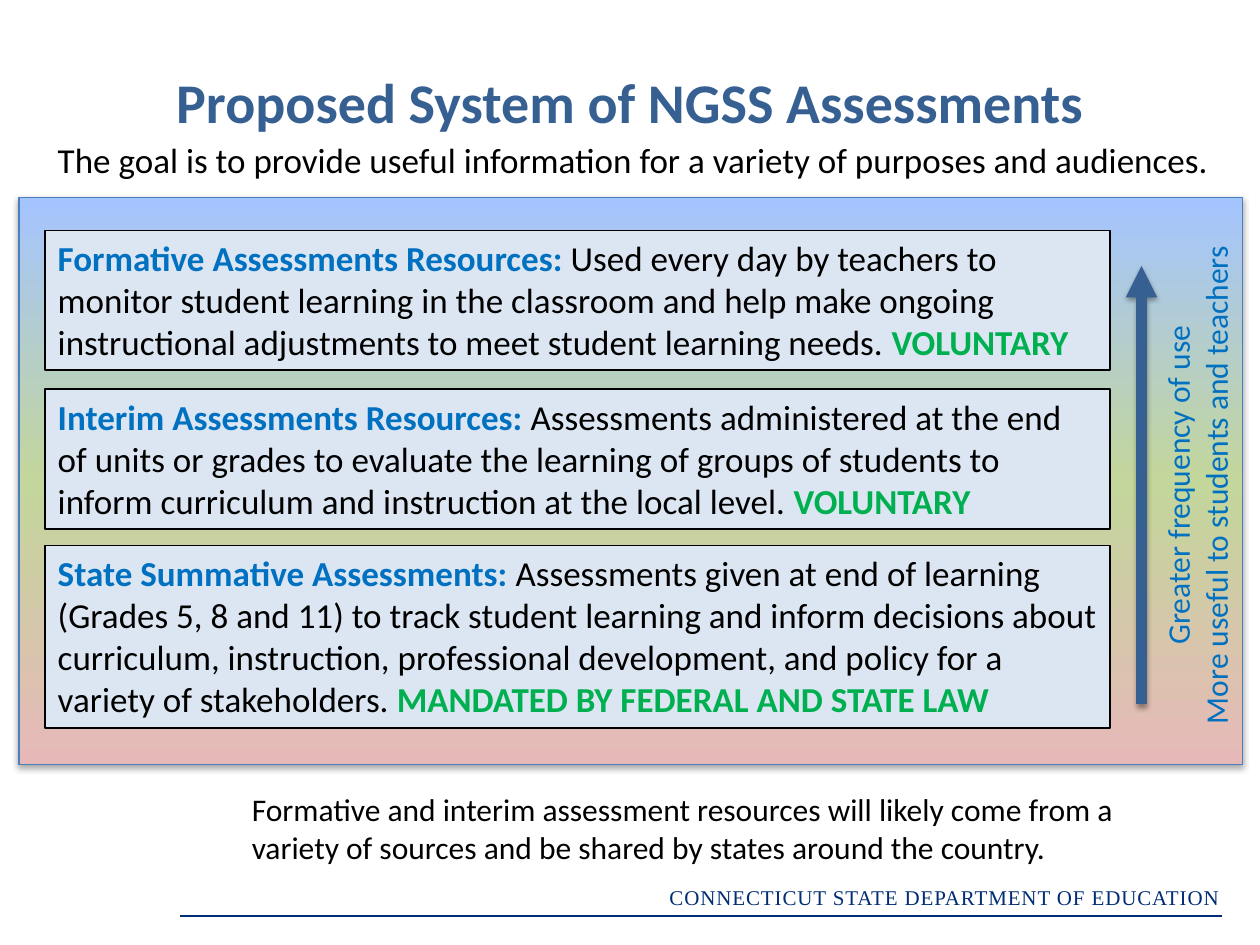
import pptx
import pptx.util
import pptx.dml.color
import pptx.enum.shapes
import pptx.enum.text
import pptx.oxml
import pptx.oxml.ns
from pptx.util import Inches

ALIGN = pptx.enum.text.PP_ALIGN
ANCHOR = pptx.enum.text.MSO_ANCHOR
NAMESPACE = pptx.oxml.ns.nsdecls("a")
BLUE, NAVY, STEEL, GREEN, BLACK = "0070C0", "002D73", "376092", "00B050", "000000"

ASSESSMENTS = [
    (1.83, 1.11, "Formative Assessments Resources: ",
     "Used every day by teachers to monitor student learning in the classroom and help "
     "make ongoing instructional adjustments to meet student learning needs. ",
     "VOLUNTARY"),
    (3.09, 1.11, "Interim Assessments Resources: ",
     "Assessments administered at the end of units or grades to evaluate the learning of "
     "groups of students to inform curriculum and instruction at the local level. ",
     "VOLUNTARY"),
    (4.33, 1.45, "State Summative Assessments: ",
     "Assessments given at end of learning (Grades 5, 8 and 11) to track student learning "
     "and inform decisions about curriculum, instruction, professional development, and "
     "policy for a variety of stakeholders. ",
     "MANDATED BY FEDERAL AND STATE LAW"),
]


def rgb(value):
    return pptx.dml.color.RGBColor.from_string(value)


def style_run(run, size, color, bold=False, font="Calibri"):
    run.font.name = font
    run.font.size = pptx.util.Pt(size)
    run.font.bold = bold
    run.font.color.rgb = rgb(color)


def add_text(slide, box, lines, size, color, align=ALIGN.LEFT, wrap=True, **style):
    shape = slide.shapes.add_textbox(*box)
    frame = shape.text_frame
    frame.word_wrap = wrap
    frame.text = "\n".join(lines)
    for paragraph in frame.paragraphs:
        paragraph.alignment = align
        for run in paragraph.runs:
            style_run(run, size, color, **style)
    return shape


def add_rectangle(slide, box, line_color, line_width):
    shape = slide.shapes.add_shape(pptx.enum.shapes.MSO_SHAPE.RECTANGLE, *box)
    shape.line.color.rgb = rgb(line_color)
    shape.line.width = pptx.util.Pt(line_width)
    shape.shadow.inherit = False
    return shape


def add_line(slide, start, end, color, width):
    line = slide.shapes.add_connector(
        pptx.enum.shapes.MSO_CONNECTOR.STRAIGHT, *start, *end)
    line.line.color.rgb = rgb(color)
    line.line.width = pptx.util.Pt(width)
    set_effects(line)
    return line


def set_effects(shape, shadow_opacity=None):
    """Replace inherited effects with none, or with a soft shadow below."""
    properties = shape._element.spPr
    for effects in properties.findall(pptx.oxml.ns.qn("a:effectLst")):
        properties.remove(effects)
    shadow = "" if shadow_opacity is None else (
        f'<a:outerShdw blurRad="{pptx.util.Pt(3.1)}" dist="{pptx.util.Pt(1.8)}" '
        'dir="5400000" rotWithShape="0"><a:srgbClr val="000000">'
        f'<a:alpha val="{shadow_opacity * 1000}"/></a:srgbClr></a:outerShdw>')
    properties.append(pptx.oxml.parse_xml(
        f"<a:effectLst {NAMESPACE}>{shadow}</a:effectLst>"))


def set_gradient(shape, stops):
    """Fill from bottom to top with (percent, color) stops."""
    shape.fill.gradient()
    shape.fill.gradient_angle = 90
    stop_list = shape._element.spPr.find(".//" + pptx.oxml.ns.qn("a:gsLst"))
    for stop in list(stop_list):
        stop_list.remove(stop)
    for percent, color in stops:
        stop_list.append(pptx.oxml.parse_xml(
            f'<a:gs {NAMESPACE} pos="{percent * 1000}"><a:srgbClr val="{color}"/></a:gs>'))


def add_heading(slide, left, top, width):
    title = add_text(slide, (left, top, width, Inches(1.36)),
                     ["Proposed System of NGSS Assessments"], 32, STEEL,
                     ALIGN.CENTER, bold=True)
    title.text_frame.vertical_anchor = ANCHOR.MIDDLE
    add_text(slide, (Inches(0.36), top + Inches(0.93), Inches(9.65), Inches(0.44)),
             ["The goal is to provide useful information for a variety of purposes "
              "and audiences."], 20, BLACK, wrap=False)


def add_panel(slide, left, top, width, height):
    panel = add_rectangle(slide, (left, top, width, height), "4B7EBC", 0.75)
    set_gradient(panel, [(0, "E6B9B8"), (50, "C3D69B"), (100, "A4C4FF")])
    set_effects(panel, shadow_opacity=35)


def add_assessment(slide, box, name, description, status):
    shape = add_rectangle(slide, box, BLACK, 1)
    shape.fill.solid()
    shape.fill.fore_color.rgb = rgb("DCE6F2")
    frame = shape.text_frame
    frame.word_wrap = True
    frame.vertical_anchor = ANCHOR.TOP
    paragraph = frame.paragraphs[0]
    paragraph.alignment = ALIGN.LEFT
    for text, color, bold in ((name, BLUE, True), (description, BLACK, False),
                              (status, GREEN, True)):
        run = paragraph.add_run()
        run.text = text
        style_run(run, 20, color, bold)


def add_frequency_scale(slide, left, top, height):
    """Upward arrow with its caption turned to read from bottom to top."""
    arrow = add_line(slide, (left, top + height), (left, top), STEEL, 6)
    arrow.line._get_or_add_ln().append(
        pptx.oxml.parse_xml(f'<a:tailEnd {NAMESPACE} type="triangle"/>'))
    set_effects(arrow, shadow_opacity=38)
    caption_width, caption_height = Inches(4.04), Inches(0.71)
    center_x, center_y = left + Inches(0.44), top + height // 2
    caption = add_text(
        slide, (center_x - caption_width // 2, center_y - caption_height // 2,
                caption_width, caption_height),
        ["Greater frequency of use", "More useful to students and teachers"],
        18, BLUE, ALIGN.CENTER, wrap=False)
    caption.rotation = 270


def add_footer(slide, left, top, right):
    add_line(slide, (left, top), (right, top), NAVY, 0.75)
    width = Inches(4.62)
    department = add_text(
        slide, (right + Inches(0.08) - width, top - Inches(0.3), width, Inches(0.3)),
        ["CONNECTICUT STATE DEPARTMENT OF EDUCATION"], 12, NAVY, ALIGN.RIGHT,
        font="Times New Roman")
    run = department.text_frame.paragraphs[0].runs[0]
    run.font._element.set("spc", "50")


def main():
    presentation = pptx.Presentation()
    presentation.slide_width, presentation.slide_height = Inches(10), Inches(7.5)
    slide = presentation.slides.add_slide(presentation.slide_layouts[6])

    add_panel(slide, Inches(0.15), Inches(1.57), Inches(9.71), Inches(4.5))
    add_footer(slide, Inches(1.43), Inches(7.27), Inches(9.7))
    add_heading(slide, Inches(0.5), Inches(0.12), Inches(9))
    for top, height, name, description, status in ASSESSMENTS:
        box = Inches(0.36), Inches(top), Inches(8.45), Inches(height)
        add_assessment(slide, box, name, description, status)
    add_frequency_scale(slide, Inches(9.06), Inches(2.11), Inches(3.48))
    add_text(slide, (Inches(1.9), Inches(6.22), Inches(7.6), Inches(0.71)),
             ["Formative and interim assessment resources will likely come from a "
              "variety of sources and be shared by states around the country."], 18, BLACK)
    presentation.save("out.pptx")


if __name__ == "__main__":
    main()
